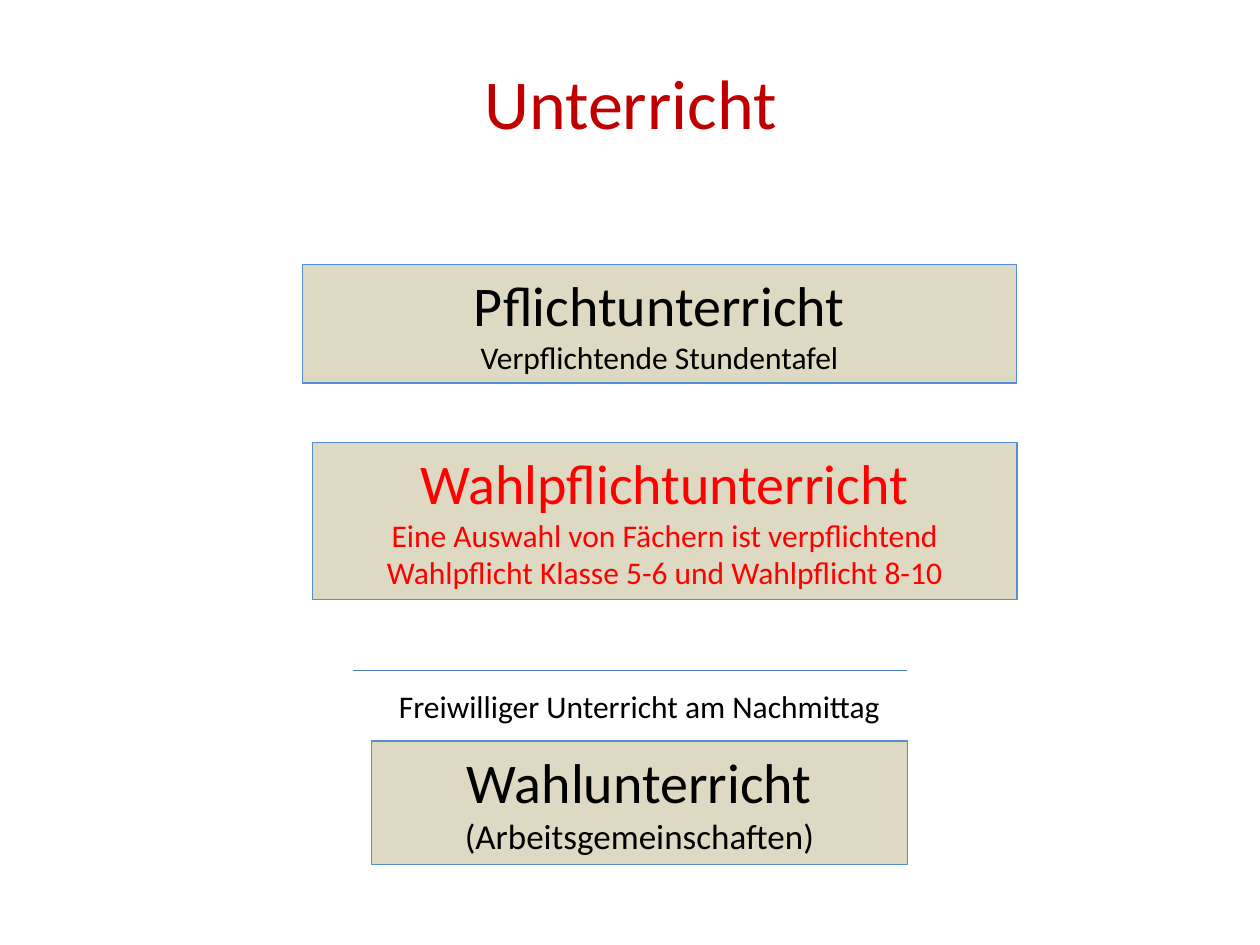
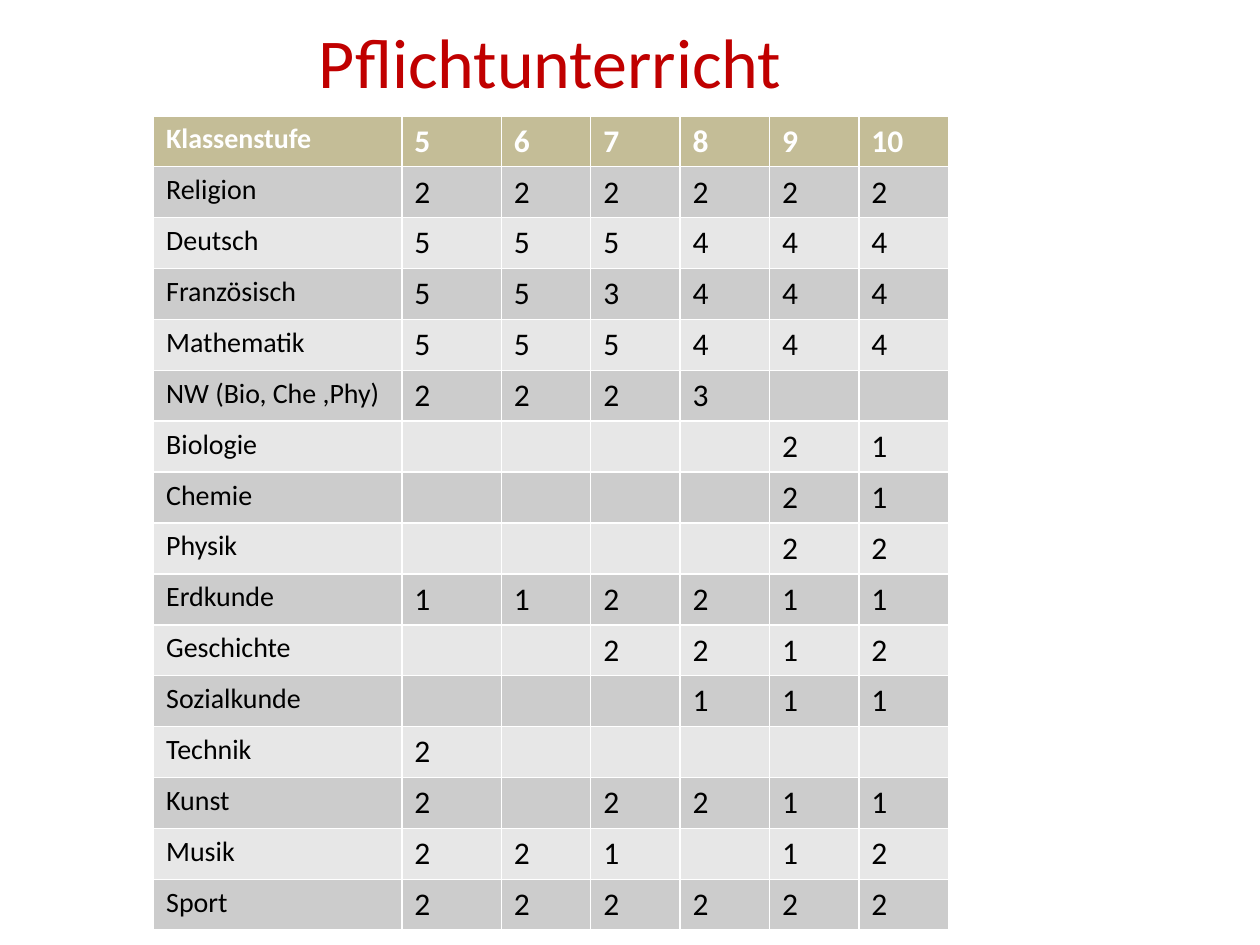
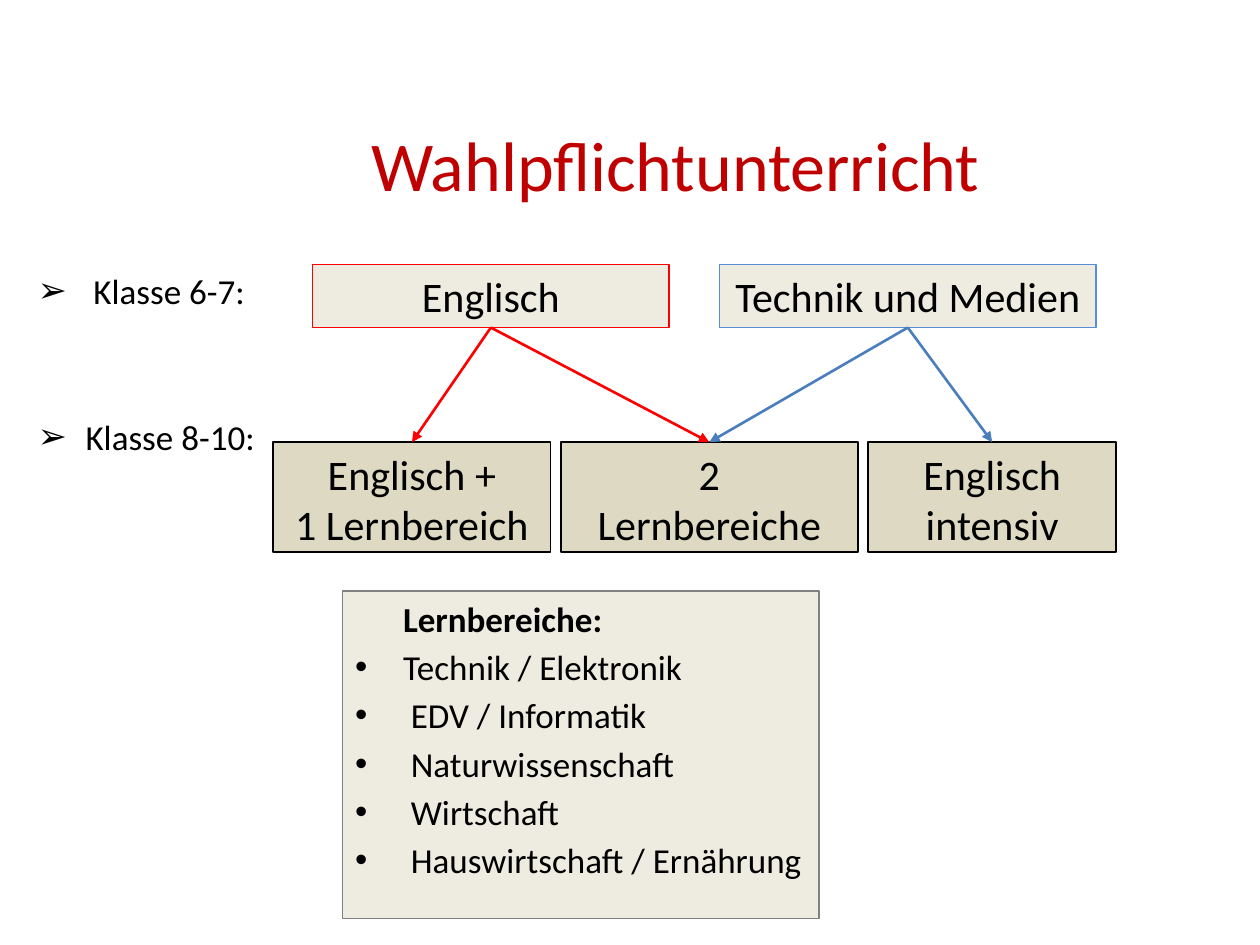
from lxml.etree import SubElement
from pptx import Presentation
from pptx.dml.color import RGBColor
from pptx.enum.shapes import MSO_CONNECTOR, MSO_SHAPE
from pptx.enum.text import MSO_ANCHOR, PP_ALIGN
from pptx.oxml.ns import qn
from pptx.util import Pt

FONT = "Calibri"
INK = RGBColor(0x00, 0x00, 0x00)
WHITE = RGBColor(0xFF, 0xFF, 0xFF)
WINE = RGBColor(0xC0, 0x00, 0x00)
RED = RGBColor(0xFF, 0x00, 0x00)
BLUE = RGBColor(0x55, 0x8E, 0xD5)
STEEL = RGBColor(0x4B, 0x7E, 0xBC)
GRAY = RGBColor(0x80, 0x80, 0x80)
SAND = RGBColor(0xDD, 0xD9, 0xC3)
CREAM = RGBColor(0xEE, 0xEC, 0xE1)
KHAKI = RGBColor(0xC4, 0xBD, 0x97)
BANDS = RGBColor(0xE7, 0xE7, 0xE7), RGBColor(0xCC, 0xCC, 0xCC)

HOURS = [
    ("Klassenstufe", "5", "6", "7", "8", "9", "10"),
    ("Religion", "2", "2", "2", "2", "2", "2"),
    ("Deutsch", "5", "5", "5", "4", "4", "4"),
    ("Französisch", "5", "5", "3", "4", "4", "4"),
    ("Mathematik", "5", "5", "5", "4", "4", "4"),
    ("NW (Bio, Che ,Phy)", "2", "2", "2", "3", "", ""),
    ("Biologie", "", "", "", "", "2", "1"),
    ("Chemie", "", "", "", "", "2", "1"),
    ("Physik", "", "", "", "", "2", "2"),
    ("Erdkunde", "1", "1", "2", "2", "1", "1"),
    ("Geschichte", "", "", "2", "2", "1", "2"),
    ("Sozialkunde", "", "", "", "1", "1", "1"),
    ("Technik", "2", "", "", "", "", ""),
    ("Kunst", "2", "", "2", "2", "1", "1"),
    ("Musik", "2", "2", "1", "", "1", "2"),
    ("Sport", "2", "2", "2", "2", "2", "2"),
]


class Deck:
    """Holds the shared style and the slide being built."""

    def __init__(self):
        self.show = Presentation()
        self.show.slide_width, self.show.slide_height = Pt(720), Pt(540)
        self.slide = None

    def page(self, title, spot, shift=0):
        """Start a slide with its title, moved right by an extra inset."""
        self.slide = self.show.slides.add_slide(self.show.slide_layouts[6])
        frame = self.text(spot)
        frame.vertical_anchor = MSO_ANCHOR.MIDDLE
        frame.margin_left = Pt(7.2 + shift)
        self.para(frame, title, 40, WINE)

    def text(self, spot):
        """Add a wrapping text box and return its frame."""
        frame = self.slide.shapes.add_textbox(*map(Pt, spot)).text_frame
        frame.word_wrap = True
        return frame

    def box(self, spot, fill, edge, width, lines=(), hue=INK):
        """Add a filled rectangle with centred lines of (text, size)."""
        shape = self.slide.shapes.add_shape(MSO_SHAPE.RECTANGLE, *map(Pt, spot))
        shape.shadow.inherit = False
        shape.fill.solid()
        shape.fill.fore_color.rgb = fill
        shape.line.color.rgb = edge
        shape.line.width = Pt(width)
        shape.text_frame.vertical_anchor = MSO_ANCHOR.TOP
        for words, size in lines:
            self.para(shape.text_frame, words, size, hue)
        return shape

    def para(self, frame, words, size, hue=INK, align=PP_ALIGN.CENTER, bold=False):
        """Fill the first free paragraph of a frame and return it."""
        para = frame.add_paragraph() if frame.text else frame.paragraphs[0]
        para.alignment = align
        run = para.add_run()
        run.text = words
        run.font.name, run.font.size = FONT, Pt(size)
        run.font.bold = bold
        run.font.color.rgb = hue
        return para

    def item(self, frame, words, left, mark=None, gap=0, bold=False):
        """Add a list line, indented, with a bullet if a mark is given."""
        para = self.para(frame, words, 20, align=PP_ALIGN.LEFT, bold=bold)
        para.space_before = Pt(gap)
        props = para._p.get_or_add_pPr()
        props.set("marL", str(Pt(left)))
        if mark:
            props.set("indent", str(-Pt(left)))
            SubElement(props, qn("a:buFont"), typeface="Arial")
            SubElement(props, qn("a:buChar"), char=mark)

    def line(self, hue, width, ends=(0, 0, 0, 0)):
        """Add a straight line without a shadow."""
        line = self.slide.shapes.add_connector(MSO_CONNECTOR.STRAIGHT, *map(Pt, ends))
        line.line.color.rgb = hue
        line.line.width = Pt(width)
        SubElement(line._element.spPr, qn("a:effectLst"))
        return line

    def arrow(self, start, end, hue):
        """Join the bottom of one box to the top of another."""
        line = self.line(hue, 1.5)
        line.begin_connect(start, 2)
        line.end_connect(end, 0)
        SubElement(line.line._get_or_add_ln(), qn("a:tailEnd"), type="triangle")

    def table(self, left, top, widths, height, rows):
        """Add a table with a header row and banded rows below."""
        size = sum(widths), height * len(rows)
        grid = self.slide.shapes.add_table(
            len(rows), len(widths), *map(Pt, (left, top, *size))).table
        for col, width in zip(grid.columns, widths):
            col.width = Pt(width)
        for r, row in enumerate(rows):
            grid.rows[r].height = Pt(height)
            for c, words in enumerate(row):
                cell = grid.cell(r, c)
                cell.fill.solid()
                cell.fill.fore_color.rgb = BANDS[r % 2] if r else KHAKI
                if words:
                    self.para(cell.text_frame, words, 18 if c else 16,
                              INK if r else WHITE, PP_ALIGN.LEFT, not r)


def kinds(deck):
    """Build the slide on the three kinds of lessons."""
    deck.page("Unterricht", (201.6, 21.6, 317.5, 72.7))
    deck.box((212.4, 423.4, 306, 70.6), SAND, BLUE, 0.75,
             [("Wahlunterricht", 32), ("(Arbeitsgemeinschaften)", 20)])
    deck.box((172.8, 151.2, 408.2, 67.7), SAND, BLUE, 0.75,
             [("Pflichtunterricht", 32), ("Verpflichtende Stundentafel", 18)])
    deck.box((178.6, 252.7, 402.5, 90), SAND, BLUE, 0.75,
             [("Wahlpflichtunterricht", 32),
              ("Eine Auswahl von Fächern ist verpflichtend", 18),
              ("Wahlpflicht Klasse 5-6 und Wahlpflicht 8-10", 18)], RED)
    deck.line(STEEL, 0.75, (201.6, 383, 518.4, 383))
    note = deck.text((212.4, 388.8, 306, 28.8))
    deck.para(note, "Freiwilliger Unterricht am Nachmittag", 18)


def hours(deck):
    """Build the slide with the table of hours."""
    deck.page("Pflichtunterricht", (121.7, 20.9, 385.2, 27.4))
    deck.table(87.8, 66.2, [141.8, 56.9] + [51.1] * 5, 29.1, HOURS)


def paths(deck):
    """Build the slide on the choices and where they lead."""
    deck.page("Wahlpflichtunterricht", (127.4, 71.3, 488.2, 43.9), 28.8)
    years = deck.text((14.4, 122.4, 142.6, 356.4))
    years.margin_top = Pt(31.6)
    deck.item(years, "Klasse 6-7:", 31.9, "➢")
    deck.item(years, "Klasse 8-10:", 27.4, "➢", 59.6)

    tech = deck.box((411.1, 151.2, 215.3, 36), CREAM, BLUE, 1,
                    [("Technik und Medien", 24)])
    speech = deck.box((178.6, 151.2, 203.8, 36), CREAM, RED, 1, [("Englisch", 24)])
    plus, both, deep = [
        deck.box((left, 252.7, width, 62.6), SAND, INK, 1,
                 [(words, 24) for words in lines])
        for left, width, lines in (
            (156.2, 158.4, ("Englisch +", "1 Lernbereich")),
            (320.4, 169.9, ("2", "Lernbereiche")),
            (496.1, 141.8, ("Englisch", "intensiv")))]
    for start, end, hue in ((speech, plus, RED), (speech, both, RED),
                            (tech, both, STEEL), (tech, deep, STEEL)):
        deck.arrow(start, end, hue)

    fields = deck.box((195.8, 337.7, 272.2, 187.2), CREAM, GRAY, 0.75).text_frame
    deck.item(fields, "Lernbereiche:", 27.4, bold=True)
    deck.item(fields, "Technik / Elektronik", 27.4, "•", 3.6)
    for words in ("EDV / Informatik", "Naturwissenschaft", "Wirtschaft",
                  "Hauswirtschaft / Ernährung"):
        deck.item(fields, words, 31.9, "•", 3.6)


def main():
    """Build all slides and save them."""
    deck = Deck()
    for build in (kinds, hours, paths):
        build(deck)
    deck.show.save("out.pptx")


if __name__ == "__main__":
    main()
